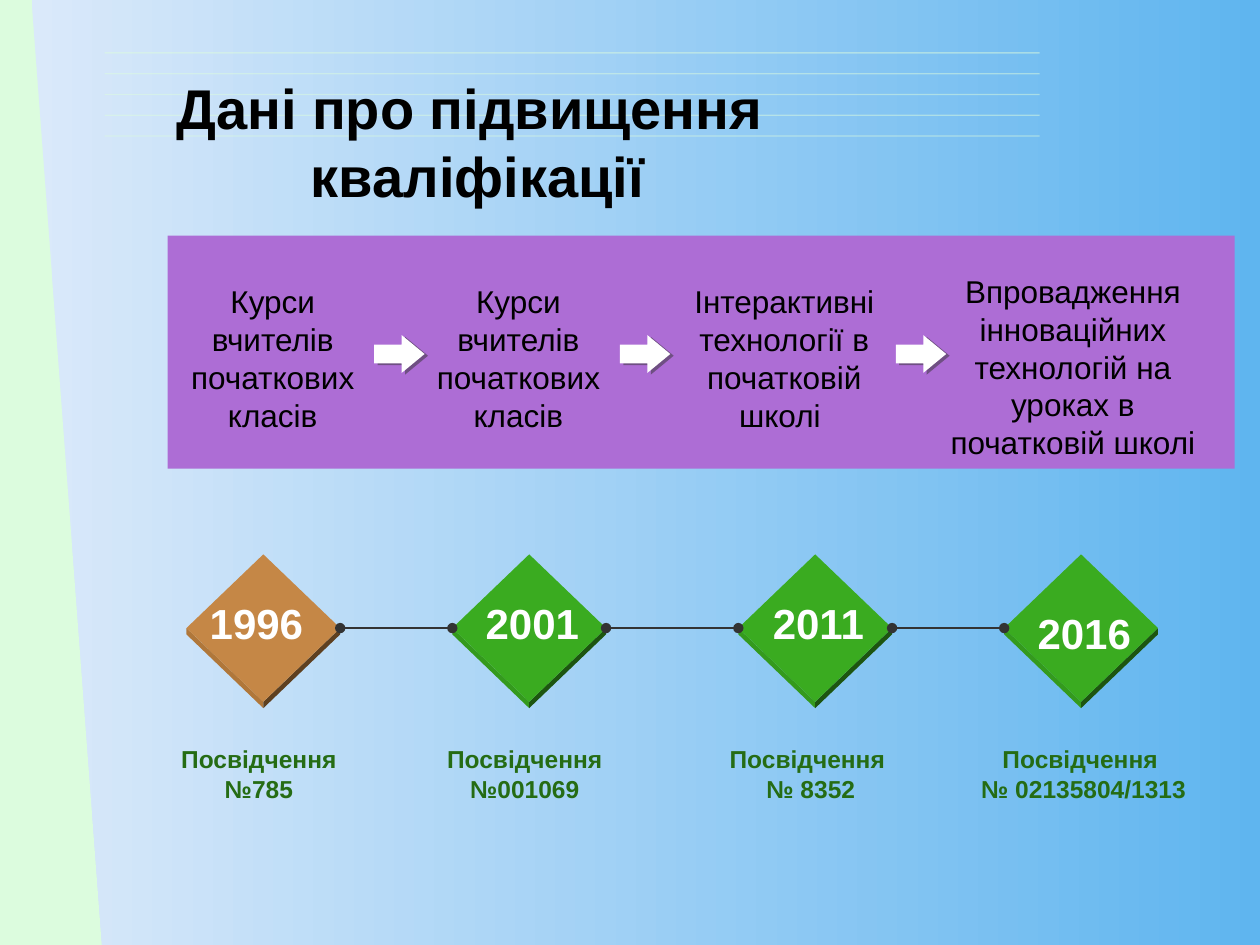
import pptx
import pptx.util
import pptx.dml.color
import pptx.enum.shapes
import pptx.enum.text
import pptx.oxml
import pptx.oxml.ns

Inches = pptx.util.Inches
RGBColor = pptx.dml.color.RGBColor
SHAPE = pptx.enum.shapes.MSO_SHAPE
ANCHOR = pptx.enum.text.MSO_ANCHOR

BLACK = RGBColor(0x00, 0x00, 0x00)
WHITE = RGBColor(0xFF, 0xFF, 0xFF)
MINT = RGBColor(0xDC, 0xFC, 0xDE)
PALE_BLUE = RGBColor(0xDA, 0xE9, 0xFA)
SKY_BLUE = RGBColor(0x5F, 0xB5, 0xEF)
PURPLE = RGBColor(0xAD, 0x6D, 0xD5)
CHARCOAL = RGBColor(0x33, 0x33, 0x33)
LABEL_GREEN = RGBColor(0x25, 0x6C, 0x14)
BROWN = (RGBColor(0xC5, 0x87, 0x46), RGBColor(0xB0, 0x77, 0x3A), RGBColor(0x5E, 0x40, 0x20))
GREEN = (RGBColor(0x3A, 0xAB, 0x20), RGBColor(0x34, 0x9A, 0x1D), RGBColor(0x1D, 0x55, 0x10))

STEPS = [
    (0, 0.32, 1.83, "Курси вчителів початкових класів"),
    (1.95, 0.32, 1.83, "Курси вчителів початкових класів"),
    (4.06, 0.32, 1.83, "Інтерактивні технології в початковій школі "),
    (6.17, 0.24, 2.19, "Впровадження інноваційних технологій на уроках в початковій школі "),
]
ARROW_LEFTS = [1.72, 3.67, 5.86]
MILESTONES = [
    (0, 0.08, 0.31, 1.77, "1996", "Посвідчення\n№785", BROWN),
    (2.11, 0.16, 0.31, 1.77, "2001", "Посвідчення\n№001069", GREEN),
    (4.38, 0.16, 0.31, 1.77, "2011", "Посвідчення \n№ 8352", GREEN),
    (6.49, 0.16, 0.39, 1.88, "2016", "Посвідчення \n№ 02135804/1313", GREEN),
]


def add_effects(properties, content=""):
    namespace = pptx.oxml.ns.nsdecls("a")
    properties.append(pptx.oxml.parse_xml(f"<a:effectLst {namespace}>{content}</a:effectLst>"))


def shadow_xml(color, distance, angle, alpha):
    return (f'<a:outerShdw dist="{pptx.util.Pt(distance)}" dir="{angle * 60000}" algn="ctr">'
            f'<a:srgbClr val="{color}"><a:alpha val="{alpha * 1000}"/></a:srgbClr></a:outerShdw>')


def add_text(slide, box, text, size=18, color=BLACK, bold=False, anchor=ANCHOR.TOP):
    shape = slide.shapes.add_textbox(*map(Inches, box))
    frame = shape.text_frame
    frame.word_wrap = True
    frame.vertical_anchor = anchor
    frame.text = text
    for paragraph in frame.paragraphs:
        paragraph.alignment = pptx.enum.text.PP_ALIGN.CENTER
        for run in paragraph.runs:
            run.font.name = "Arial"
            run.font.size = pptx.util.Pt(size)
            run.font.bold = bold
            run.font.color.rgb = color
    return shape


def paint(shape, color):
    shape.shadow.inherit = False
    shape.fill.solid()
    shape.fill.fore_color.rgb = color
    shape.line.fill.background()
    return shape


def add_block(slide, kind, box, color):
    return paint(slide.shapes.add_shape(kind, *map(Inches, box)), color)


def add_polygon(slide, points, color):
    start, *others = [(Inches(x), Inches(y)) for x, y in points]
    builder = slide.shapes.build_freeform(*start, scale=1.0)
    builder.add_line_segments(others, close=True)
    return paint(builder.convert_to_shape(), color)


def add_line(slide, start, end, color, width):
    connector = slide.shapes.add_connector(
        pptx.enum.shapes.MSO_CONNECTOR.STRAIGHT, *map(Inches, (*start, *end)))
    connector.line.color.rgb = color
    connector.line.width = pptx.util.Pt(width)
    add_effects(connector._element.spPr)
    return connector


def add_backdrop(slide, width, height):
    slide.background.fill.solid()
    slide.background.fill.fore_color.rgb = MINT
    panel = add_polygon(slide, [(0.81, height), (0.25, 0), (width, 0), (width, height)], PALE_BLUE)
    panel.fill.gradient()
    panel.fill.gradient_angle = 0
    for stop, position, color in zip(panel.fill.gradient_stops, (0, 1), (PALE_BLUE, SKY_BLUE)):
        stop.position = position
        stop.color.rgb = color


def add_stripes(slide, left, top, width, height, count=5):
    for index in range(count):
        y = top + index * height / (count - 1)
        stripe = add_line(slide, (left, y), (left + width, y), MINT, 0.75)
        color = stripe.line._ln.find(".//" + pptx.oxml.ns.qn("a:srgbClr"))
        color.append(pptx.oxml.parse_xml(f'<a:alpha {pptx.oxml.ns.nsdecls("a")} val="50000"/>'))


def add_title(slide, left, top, width, height):
    title = add_text(slide, (left, top, width, height), "Дані про підвищення \vкваліфікації",
                     size=32, bold=True, anchor=ANCHOR.MIDDLE)
    for run in title.text_frame.paragraphs[0].runs:
        properties = run.font._element
        effects = pptx.oxml.parse_xml(
            f'<a:effectLst {pptx.oxml.ns.nsdecls("a")}>{shadow_xml(WHITE, 2, 45, 100)}</a:effectLst>')
        properties.find(pptx.oxml.ns.qn("a:solidFill")).addnext(effects)


def add_process(slide, left, top, width, height):
    add_block(slide, SHAPE.RECTANGLE, (left, top, width, height), PURPLE)
    text_left = left - 0.08
    for offset, drop, text_width, text in STEPS:
        add_text(slide, (text_left + offset, top + drop, text_width, height - 0.54), text)
    for offset in ARROW_LEFTS:
        arrow = add_block(slide, SHAPE.RIGHT_ARROW, (text_left + offset, top + 0.79, 0.4, 0.3), WHITE)
        arrow.adjustments[1] = 0.605
        effects = arrow._element.spPr.find(pptx.oxml.ns.qn("a:effectLst"))
        arrow._element.spPr.remove(effects)
        add_effects(arrow._element.spPr, shadow_xml(CHARCOAL, 2.2, 27, 50))


def add_diamond(slide, left, top, width, height, colors, depth=0.05):
    face, left_side, right_side = colors
    middle, center = left + width / 2, top + height / 2
    for x, color in ((left, left_side), (left + width, right_side)):
        add_polygon(slide, [(x, center), (middle, top + height),
                            (middle, top + height + depth), (x, center + depth)], color)
    return add_block(slide, SHAPE.DIAMOND, (left, top, width, height), face)


def add_timeline(slide, left, top, width, height):
    diamonds = []
    for offset, year_shift, year_drop, label_width, year, label, colors in MILESTONES:
        x = left + offset
        diamonds.append(add_diamond(slide, x, top, width, height, colors))
        add_text(slide, (x + year_shift, top + year_drop - 0.02, 0.95, 0.5), year,
                 size=24, color=WHITE, bold=True)
        add_text(slide, (x - 0.31, top + 1.46, label_width, 0.57), label,
                 size=14, color=LABEL_GREEN, bold=True)
    for first, second in zip(diamonds, diamonds[1:]):
        connector = add_line(slide, (0, 0), (1, 1), CHARCOAL, 1)
        connector.begin_connect(first, 3)
        connector.end_connect(second, 1)
        for end in ("headEnd", "tailEnd"):
            connector.line._ln.append(pptx.oxml.parse_xml(
                f'<a:{end} {pptx.oxml.ns.nsdecls("a")} type="oval"/>'))


def main():
    presentation = pptx.Presentation()
    presentation.slide_width = Inches(10)
    presentation.slide_height = Inches(7.5)
    slide = presentation.slides.add_slide(presentation.slide_layouts[6])
    add_backdrop(slide, 10, 7.5)
    add_stripes(slide, 0.83, 0.42, 7.42, 0.66)
    add_title(slide, -0.86, 0.62, 9.3, 1)
    add_process(slide, 1.33, 1.87, 8.47, 1.85)
    add_timeline(slide, 1.48, 4.4, 1.22, 1.17)
    presentation.save("out.pptx")


if __name__ == "__main__":
    main()
